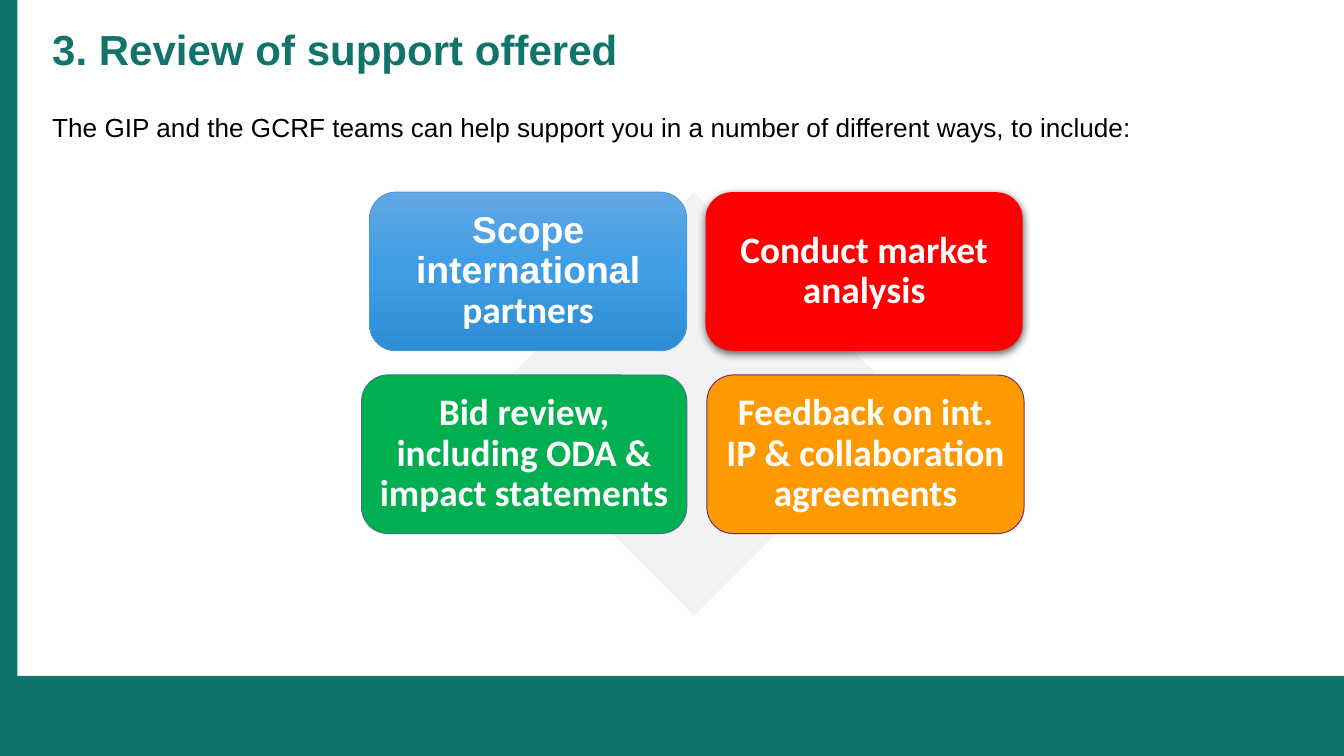
import copy

import pptx
import pptx.dml.color
import pptx.enum.shapes
import pptx.enum.text
import pptx.oxml
import pptx.oxml.ns
import pptx.util

Inches = pptx.util.Inches
Pt = pptx.util.Pt
SHAPES = pptx.enum.shapes.MSO_SHAPE
ALIGN = pptx.enum.text.PP_ALIGN
ANCHOR = pptx.enum.text.MSO_ANCHOR

COLORS = {
    "teal": "10746A", "white": "FFFFFF", "black": "000000", "diamond": "F2F2F2",
    "blue top": "62A7E2", "blue middle": "3D9DE5", "blue bottom": "2E8DD4",
    "blue line": "459CDD", "red": "FF0000", "green": "00B050",
    "green line": "3B768E", "orange": "FF9900", "orange line": "6F2A6E",
}
WIDTH, HEIGHT = 10, 5.625


def rgb(name):
    return pptx.dml.color.RGBColor.from_string(COLORS[name])


def add_panel(kind, left, top, width, height, fill, line=None):
    shape = slide.shapes.add_shape(
        kind, Inches(left), Inches(top), Inches(width), Inches(height))
    shape.shadow.inherit = False
    shape.fill.solid()
    shape.fill.fore_color.rgb = rgb(fill)
    if line:
        shape.line.color.rgb = rgb(line)
        shape.line.width = Pt(0.5)
    else:
        shape.line.fill.background()
    return shape


def add_text(left, top, width, height, runs, size, color, bold=True, wrap=True):
    box = slide.shapes.add_textbox(
        Inches(left), Inches(top), Inches(width), Inches(height))
    box.text_frame.word_wrap = wrap
    paragraph = box.text_frame.paragraphs[0]
    for text, font in runs:
        run = paragraph.add_run()
        run.text = text
        run.font.name = font
        run.font.size = Pt(size)
        run.font.bold = bold
        run.font.color.rgb = rgb(color)
    return box.text_frame


presentation = pptx.Presentation()
presentation.slide_width = Inches(WIDTH)
presentation.slide_height = Inches(HEIGHT)
slide = presentation.slides.add_slide(presentation.slide_layouts[6])

# Frame bands along the bottom and left edges
add_panel(SHAPES.RECTANGLE, 0, 5.03, WIDTH, HEIGHT - 5.03, "teal")
add_panel(SHAPES.RECTANGLE, 0, 0, 0.13, HEIGHT, "teal")

# Title and introduction
margin = 0.29
title = add_text(margin, 0.17, 9.28, 0.72,
                 [("3. Review of support offered", "Arial")], 22.5, "teal")
title.paragraphs[0].alignment = ALIGN.JUSTIFY
title.paragraphs[0].line_spacing = 0.9
intro = "The GIP and the GCRF teams can help support you in a number of different ways, to include:"
add_text(margin, 0.78, 8.27, 0.34, [(intro, "Arial")], 14, "black",
         bold=False, wrap=False)

# Diamond behind the matrix
grid_top = 1.43
add_panel(SHAPES.DIAMOND, 3.59, grid_top, 3.15, 3.15, "diamond")

# Matrix of four cards: left, row, width, fill, line, text runs
card_height, row_pitch, inset, padding = 1.18, 1.36, 0.055, 0.08
cards = [
    (2.75, 0, 2.36, "blue middle", "blue line",
     [("Scope international ", "Arial"), ("partners", "Calibri")]),
    (5.25, 0, 2.36, "red", None, [("Conduct market analysis", "Calibri")]),
    (2.69, 1, 2.42, "green", "green line",
     [("Bid review, including ODA & impact statements", "Calibri")]),
    (5.26, 1, 2.36, "orange", "orange line",
     [("Feedback on int. IP & collaboration agreements", "Calibri")]),
]
for left, row, width, fill, line, runs in cards:
    top = grid_top + row * row_pitch
    card = add_panel(SHAPES.ROUNDED_RECTANGLE, left, top, width, card_height, fill, line)

    # Three-stop gradient on the blue card
    if fill == "blue middle":
        card.fill.gradient()
        card.fill.gradient_angle = 270
        first_stop = card._element.spPr.find(".//" + pptx.oxml.ns.qn("a:gs"))
        first_stop.addnext(copy.deepcopy(first_stop))
        names = ("blue top", "blue middle", "blue bottom")
        for index, (stop, name) in enumerate(zip(card.fill.gradient_stops, names)):
            stop.position = index / 2
            stop.color.rgb = rgb(name)

    # Soft shadow under the red card
    if fill == "red":
        effects = card._element.spPr.find(pptx.oxml.ns.qn("a:effectLst"))
        effects.append(pptx.oxml.parse_xml(
            f'<a:outerShdw {pptx.oxml.ns.nsdecls("a")} blurRad="{Pt(4.5)}" '
            f'dist="{Pt(1.5)}" dir="5400000" algn="ctr" rotWithShape="0">'
            f'<a:srgbClr val="{COLORS["black"]}"><a:alpha val="63000"/></a:srgbClr>'
            '</a:outerShdw>'))

    label = add_text(left + inset, top + inset, width - 2 * inset,
                     card_height - 2 * inset, runs, 20, "white")
    label.vertical_anchor = ANCHOR.MIDDLE
    label.margin_left = label.margin_right = Inches(padding)
    label.margin_top = label.margin_bottom = Inches(padding)
    label.paragraphs[0].alignment = ALIGN.CENTER
    label.paragraphs[0].line_spacing = 0.9

presentation.save("out.pptx")
